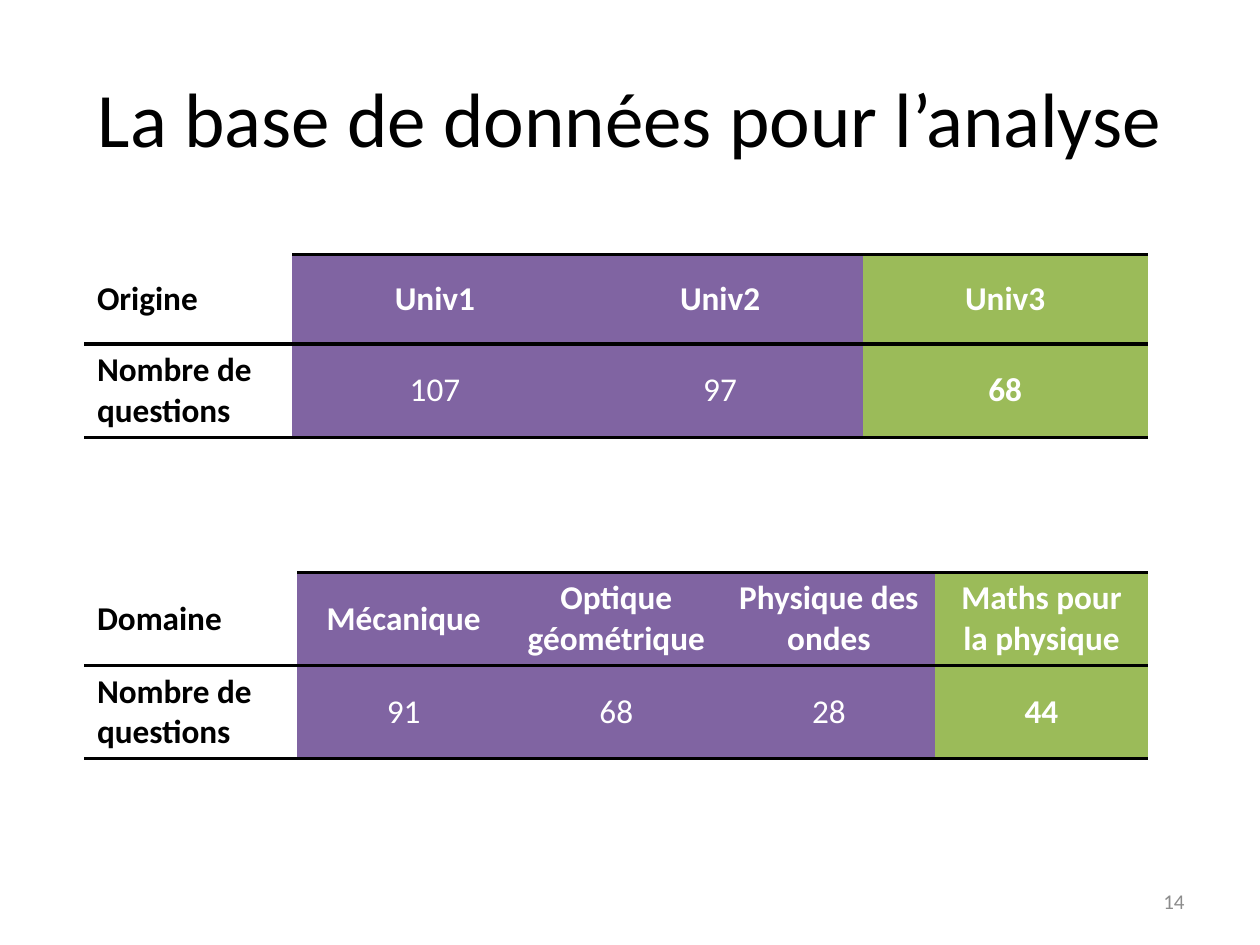
"""Build the slide that counts the analysed questions by origin and by domain."""
from dataclasses import dataclass

from lxml import etree
from pptx import Presentation
from pptx.dml.color import RGBColor
from pptx.enum.text import MSO_ANCHOR, PP_ALIGN
from pptx.oxml.ns import qn
from pptx.util import Inches, Pt

LEFT, CENTER, RIGHT = PP_ALIGN.LEFT, PP_ALIGN.CENTER, PP_ALIGN.RIGHT
MIDDLE = MSO_ANCHOR.MIDDLE
COLORS = {"black": "000000", "white": "FFFFFF", "purple": "8064A2",
          "green": "9BBB59", "grey": "8C8C8C"}
PLAIN_STYLE = "{2D5ABB26-0587-4C30-8999-92F81FD0307C}"
TABLE_LEFT, TABLE_WIDTH = 0.67, 8.44
RULE_WIDTH = 2


@dataclass
class Label:
    text: str
    box: tuple[float, float, float, float]
    size: int
    color: str
    align: PP_ALIGN


@dataclass
class CountTable:
    top: float
    label_width: float
    row_heights: tuple[float, float]
    rows: tuple[tuple[str, ...], ...]


LABELS = [
    Label("La base de données pour l’analyse", (0.5, 0.3, 9, 1.25), 44, "black", CENTER),
    Label("14", (7.17, 6.95, 2.33, 0.4), 12, "grey", RIGHT),
]
TABLES = [
    CountTable(2.02, 1.65, (0.71, 0.74), (
        ("Origine", "Univ1", "Univ2", "Univ3"),
        ("Nombre de questions", "107", "97", "68"))),
    CountTable(4.54, 1.69, (0.74, 0.74), (
        ("Domaine", "Mécanique", "Optique géométrique", "Physique des ondes",
         "Maths pour la physique"),
        ("Nombre de questions", "91", "68", "28", "44"))),
]


def rgb(name: str) -> RGBColor:
    """Return a named colour."""
    return RGBColor.from_string(COLORS[name])


def write(tf, text: str, size: int, color: str, align: PP_ALIGN, bold: bool = False) -> None:
    """Write one formatted paragraph into a text frame."""
    p = tf.paragraphs[0]
    p.alignment = align
    r = p.add_run()
    r.text = text
    for name, value in {"name": "Calibri", "size": Pt(size), "bold": bold}.items():
        setattr(r.font, name, value)
    r.font.color.rgb = rgb(color)


def add_label(s, label: Label) -> None:
    """Add a text box centred on its height."""
    tf = s.shapes.add_textbox(*map(Inches, label.box)).text_frame
    tf.word_wrap = True
    tf.vertical_anchor = MIDDLE
    write(tf, label.text, label.size, label.color, label.align)


def add_rules(cell, sides: str) -> None:
    """Draw black rules on the given sides of a cell."""
    tc_pr = cell._tc.get_or_add_tcPr()
    for i, side in enumerate(sides):
        ln = etree.Element(qn(f"a:ln{side}"), w=str(Pt(RULE_WIDTH)))
        fill = etree.SubElement(ln, qn("a:solidFill"))
        etree.SubElement(fill, qn("a:srgbClr"), val=COLORS["black"])
        tc_pr.insert(i, ln)


def add_count_table(s, spec: CountTable) -> None:
    """Add a table with a label column and a green last column."""
    last = len(spec.rows[0]) - 1
    frame = s.shapes.add_table(len(spec.rows), last + 1, Inches(TABLE_LEFT), Inches(spec.top),
                               Inches(TABLE_WIDTH), Inches(sum(spec.row_heights)))
    table = frame.table
    table.first_row = table.horz_banding = False
    table._tbl.tblPr.find(qn("a:tableStyleId")).text = PLAIN_STYLE
    value_width = (TABLE_WIDTH - spec.label_width) / last
    for j, column in enumerate(table.columns):
        column.width = Inches(value_width if j else spec.label_width)
    for i, (texts, height) in enumerate(zip(spec.rows, spec.row_heights)):
        table.rows[i].height = Inches(height)
        for j, text in enumerate(texts):
            cell = table.cell(i, j)
            cell.vertical_anchor = MIDDLE
            cell.fill.solid()
            cell.fill.fore_color.rgb = rgb("white" if j == 0 else "green" if j == last else "purple")
            write(cell.text_frame, text, 19, "white" if j else "black",
                  CENTER if j else LEFT, i == 0 or j in (0, last))
            add_rules(cell, "TB" if i or j else "B")


def main() -> None:
    """Build and save the slide."""
    prs = Presentation()
    prs.slide_width, prs.slide_height = Inches(10), Inches(7.5)
    s = prs.slides.add_slide(prs.slide_layouts[6])
    for label in LABELS:
        add_label(s, label)
    for spec in TABLES:
        add_count_table(s, spec)
    prs.save("out.pptx")


if __name__ == "__main__":
    main()
